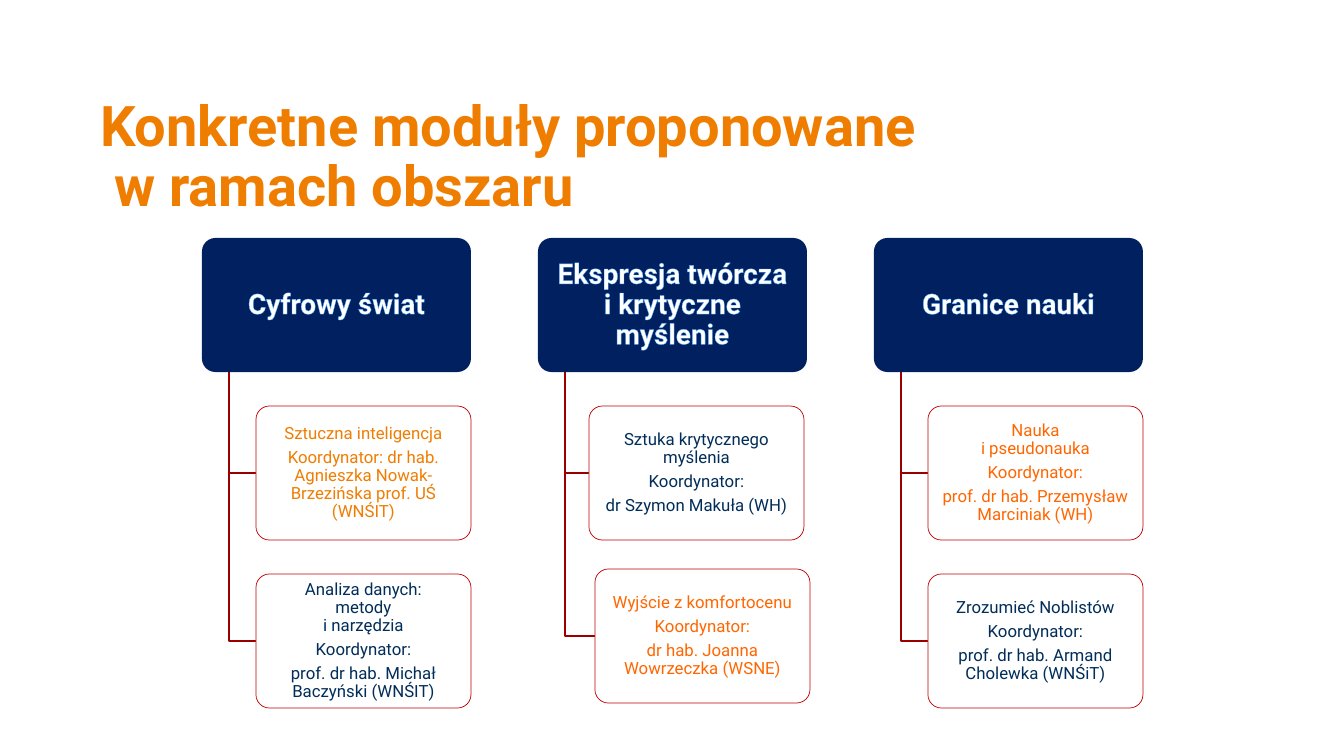
from copy import deepcopy

from lxml import etree
from pptx import Presentation
from pptx import util as u
from pptx.dml import color
from pptx.enum import shapes, text
from pptx.oxml import ns

SCALE = 914400 / 100.8
COLUMN_LEFT, COLUMN_STEP = 202, 336
HEAD_TOP, HEAD_WIDTH, BOX_HEIGHT = 238, 269, 134
CARD_WIDTH, SPINE_INDENT = 215, 27
NAVY, INK, AMBER, ORANGE = "002060", "002D59", "EF7D00", "FF6600"

COLUMNS = [
    ("Cyfrowy świat", [
        (256, 406, AMBER, ["Sztuczna inteligencja",
                           "Koordynator: dr hab. Agnieszka Nowak-Brzezińska prof. UŚ (WNŚIT)"]),
        (256, 574, INK, ["Analiza danych:\nmetody\ni narzędzia", "Koordynator:",
                         "prof. dr hab. Michał Baczyński (WNŚIT)"]),
    ]),
    ("Ekspresja twórcza\ni krytyczne myślenie", [
        (589, 406, INK, ["Sztuka krytycznego myślenia", "Koordynator:",
                         "dr Szymon Makuła (WH)"]),
        (595, 569, ORANGE, ["Wyjście z komfortocenu", "Koordynator:",
                            "dr hab. Joanna Wowrzeczka (WSNE)"]),
    ]),
    ("Granice nauki", [
        (928, 406, ORANGE, ["Nauka\ni pseudonauka", "Koordynator:",
                            "prof. dr hab. Przemysław Marciniak (WH)"]),
        (928, 574, INK, ["Zrozumieć Noblistów", "Koordynator:",
                         "prof. dr hab. Armand Cholewka (WNŚiT)"]),
    ]),
]


def px(length):
    """Turn a length in px into EMU."""
    return u.Emu(round(length * SCALE))


def rgb(value):
    """Turn a hex string into a colour."""
    return color.RGBColor.from_string(value)


def set_all(target, values):
    """Set attributes of an object from a dict."""
    for name, value in values.items():
        setattr(target, name, value)


def write(frame, lines, ink, size, bold, align, after=0):
    """Write formatted paragraphs, with line breaks sized like their text."""
    for index, line in enumerate(lines):
        para = frame.add_paragraph() if index else frame.paragraphs[0]
        para.text = line
        set_all(para, {"alignment": align, "line_spacing": 0.9,
                       "space_before": u.Pt(0), "space_after": u.Pt(after)})
        for span in para.runs:
            set_all(span.font, {"name": "Roboto", "size": u.Pt(size), "bold": bold})
            span.font.color.rgb = rgb(ink)
        for gap in para._p.findall(ns.qn("a:br")):
            gap.append(deepcopy(para.runs[0]._r.rPr))


def add_title(page, wording):
    """Place the title in its placeholder."""
    box = page.shapes.title
    set_all(box, {"left": px(90), "top": px(105), "width": px(1192), "height": px(119)})
    set_all(box.text_frame, {"vertical_anchor": text.MSO_ANCHOR.BOTTOM,
                             "auto_size": text.MSO_AUTO_SIZE.NONE, "word_wrap": True})
    write(box.text_frame, [wording], AMBER, 40, True, text.PP_ALIGN.LEFT)


def add_box(page, left, top, width, fill, inset):
    """Add a rounded box ready for centred text."""
    box = page.shapes.add_shape(shapes.MSO_SHAPE.ROUNDED_RECTANGLE,
                                px(left), px(top), px(width), px(BOX_HEIGHT))
    box.adjustments[0] = 0.1
    box.shadow.inherit = False
    box.fill.solid()
    box.fill.fore_color.rgb = rgb(fill)
    side, edge = u.Inches(inset), u.Inches(inset - 0.01)
    set_all(box.text_frame, {"word_wrap": True, "vertical_anchor": text.MSO_ANCHOR.MIDDLE,
                             "margin_left": side, "margin_right": side,
                             "margin_top": edge, "margin_bottom": edge})
    return box


def add_head(page, left, wording):
    """Add a column heading with outlined letters."""
    box = add_box(page, left, HEAD_TOP, HEAD_WIDTH, NAVY, 0.04)
    box.line.fill.background()
    write(box.text_frame, [wording], "FFFFFF", 20, True, text.PP_ALIGN.CENTER, 7)
    for props in box._element.iter(ns.qn("a:rPr")):
        outline = etree.Element(ns.qn("a:ln"), w=str(u.Pt(0.8)))
        solid = etree.SubElement(outline, ns.qn("a:solidFill"))
        etree.SubElement(solid, ns.qn("a:srgbClr"), val="5BADFF")
        props.insert(0, outline)


def add_card(page, left, top, ink, lines):
    """Add a module card on a nearly opaque white ground."""
    box = add_box(page, left, top, CARD_WIDTH, "FFFFFF", 0.03)
    ground = box._element.spPr.find(ns.qn("a:solidFill"))[0]
    etree.SubElement(ground, ns.qn("a:alpha"), val="90000")
    box.line.color.rgb = rgb("C00000")
    box.line.width = u.Pt(0.5)
    write(box.text_frame, lines, ink, 12, False, text.PP_ALIGN.CENTER, 4.2)


def add_branch(page, spine, left, top):
    """Draw the elbow from a heading to the middle of a card's left side."""
    start, middle = HEAD_TOP + BOX_HEIGHT, top + BOX_HEIGHT // 2
    path = page.shapes.build_freeform(spine, start, scale=SCALE)
    path.add_line_segments([(spine, middle), (left, middle)], close=False)
    branch = path.convert_to_shape()
    branch.shadow.inherit = False
    branch.fill.background()
    branch.line.color.rgb = rgb("9A0000")
    branch.line.width = u.Pt(1)


def main():
    """Build and save the slide."""
    deck = Presentation()
    set_all(deck, {"slide_width": px(1344), "slide_height": px(756)})
    page = deck.slides.add_slide(deck.slide_layouts[5])
    add_title(page, "Konkretne moduły proponowane\n w ramach obszaru")
    for index, (heading, cards) in enumerate(COLUMNS):
        column = COLUMN_LEFT + index * COLUMN_STEP
        add_head(page, column, heading)
        for left, top, ink, lines in cards:
            add_branch(page, column + SPINE_INDENT, left, top)
            add_card(page, left, top, ink, lines)
    deck.save("out.pptx")


if __name__ == "__main__":
    main()
